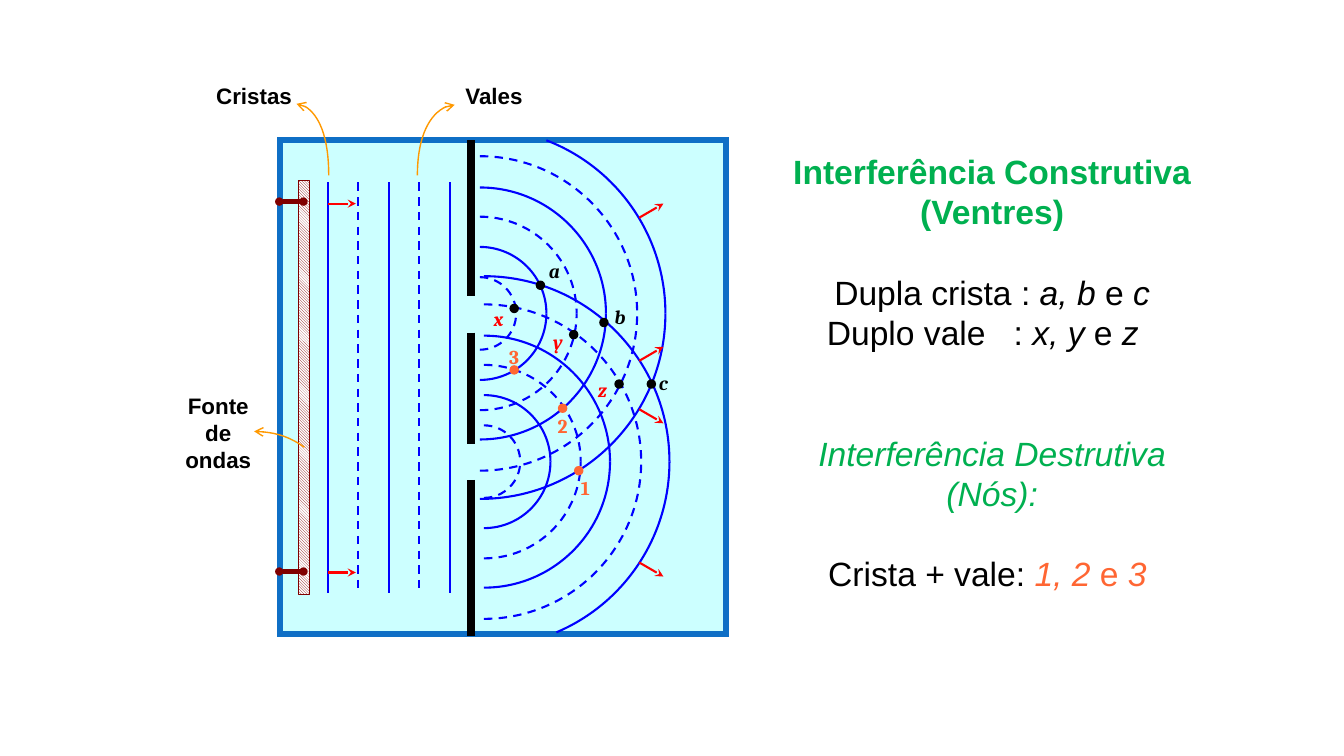
from math import cos, radians, sin, tan

from lxml import etree
from pptx import Presentation
from pptx.dml.color import RGBColor
from pptx.enum.dml import MSO_LINE, MSO_PATTERN
from pptx.enum.shapes import MSO_CONNECTOR, MSO_SHAPE
from pptx.enum.text import MSO_ANCHOR, MSO_AUTO_SIZE, PP_ALIGN
from pptx.oxml.ns import qn
from pptx.util import Inches, Pt

COLORS = {
    "water": "CCFFFF", "tank": "0F6FC6", "black": "000000", "white": "FFFFFF",
    "source": "800000", "callout": "FF9900", "wave": "0000FF",
    "red": "FF0000", "node": "FF6633", "green": "00B050",
}
LINE_PITCH = 28.7


def rgb(color):
    return RGBColor.from_string(COLORS[color])


class WaveSlide:
    def __init__(self, slide):
        self.slide = slide
        self.shapes = slide.shapes

    def stroke(self, line, color, width, dashed=False, head=None, tail=None, size="med"):
        line.color.rgb = rgb(color)
        line.width = Pt(width)
        if dashed:
            line.dash_style = MSO_LINE.DASH
        for tag, kind in (("a:headEnd", head), ("a:tailEnd", tail)):
            if kind:
                etree.SubElement(line._get_or_add_ln(), qn(tag), type=kind, w=size, len=size)

    def line(self, start, end, color, width, **style):
        points = [Inches(v) for v in (*start, *end)]
        connector = self.shapes.add_connector(MSO_CONNECTOR.STRAIGHT, *points)
        self.stroke(connector.line, color, width, **style)
        etree.SubElement(connector._element.spPr, qn("a:effectLst"))

    def shape(self, kind, box, line_color, line_width, fill=None):
        shape = self.shapes.add_shape(kind, *(Inches(v) for v in box))
        shape.shadow.inherit = False
        self.stroke(shape.line, line_color, line_width)
        if fill:
            shape.fill.solid()
            shape.fill.fore_color.rgb = rgb(fill)
        return shape

    def arc(self, center, radii, start, end, color, width, **style):
        """Draw an elliptical arc of up to 90 degrees as one Bézier curve in a box
        that reaches the center; angles run counterclockwise from the right."""
        a, b = radians(start), radians(end)
        k = 4 / 3 * tan((b - a) / 4)
        units = ((cos(a), sin(a)),
                 (cos(a) - k * sin(a), sin(a) + k * cos(a)),
                 (cos(b) + k * sin(b), sin(b) - k * cos(b)),
                 (cos(b), sin(b)))
        points = [(Inches(center[0] + radii[0] * u), Inches(center[1] - radii[1] * v))
                  for u, v in units]
        builder = self.shapes.build_freeform(*points[0])
        builder.add_line_segments([points[3], [Inches(v) for v in center]], close=False)
        curve = builder.convert_to_shape()
        to_end, to_center = curve._element.spPr.findall(".//" + qn("a:lnTo"))
        to_center.getparent().remove(to_center)
        bezier = etree.Element(qn("a:cubicBezTo"))
        for x, y in points[1:]:
            etree.SubElement(bezier, qn("a:pt"), x=str(x - curve.left), y=str(y - curve.top))
        to_end.getparent().replace(to_end, bezier)
        curve.shadow.inherit = False
        curve.fill.background()
        self.stroke(curve.line, color, width, **style)

    def label(self, text, box, color="black", size=16, font="Arial", italic=False):
        frame = self.shapes.add_textbox(*(Inches(v) for v in box)).text_frame
        frame.word_wrap = True
        frame.margin_left = frame.margin_right = frame.margin_top = frame.margin_bottom = 0
        paragraph = frame.paragraphs[0]
        paragraph.text = text
        self.format(paragraph, size, font, bold=True, italic=italic)
        paragraph.font.color.rgb = rgb(color)

    def format(self, paragraph, size, font="Arial", bold=False, italic=False):
        paragraph.alignment = PP_ALIGN.CENTER
        paragraph.font.size = Pt(size)
        paragraph.font.name = font
        paragraph.font.bold = bold
        paragraph.font.italic = italic

    def fill_placeholder(self, placeholder, box, paragraphs, bold=False):
        """Each paragraph is (blank lines before, [(text, color, italic), ...])."""
        placeholder.left, placeholder.top, placeholder.width, placeholder.height = (
            Inches(v) for v in box)
        frame = placeholder.text_frame
        frame.word_wrap = True
        frame.auto_size = MSO_AUTO_SIZE.NONE
        frame.vertical_anchor = MSO_ANCHOR.TOP
        for i, (gap, runs) in enumerate(paragraphs):
            paragraph = frame.paragraphs[0] if i == 0 else frame.add_paragraph()
            self.format(paragraph, 24, bold=bold)
            paragraph.line_spacing = Pt(LINE_PITCH)
            paragraph.space_before = Pt(gap * LINE_PITCH)
            properties = paragraph._p.get_or_add_pPr()
            properties.set("marL", "0")
            properties.set("indent", "0")
            properties.find(qn("a:defRPr")).addprevious(etree.Element(qn("a:buNone")))
            for text, color, italic in runs:
                run = paragraph.add_run()
                run.text = text
                run.font.color.rgb = rgb(color)
                run.font.italic = italic

    def tank(self):
        walls = self.shape(MSO_SHAPE.RECTANGLE, (2.78, 1.39, 4.42, 4.9), "tank", 4.5, "water")
        etree.SubElement(walls.line._get_or_add_ln(), qn("a:miter"), lim="800000")
        for top, bottom in ((1.39, 2.94), (3.3, 4.4), (4.76, 6.31)):
            self.line((4.67, top), (4.67, bottom), "black", 6)

    def wave_source(self):
        self.label("Fonte de ondas", (1.71, 3.89, 0.91, 0.82))
        plate = self.shape(MSO_SHAPE.RECTANGLE, (2.96, 1.79, 0.11, 4.11), "source", 1)
        plate.fill.patterned()
        plate.fill.pattern = MSO_PATTERN.LIGHT_DOWNWARD_DIAGONAL
        plate.fill.fore_color.rgb = rgb("source")
        plate.fill.back_color.rgb = rgb("white")
        self.arc((2.52, 5.15), (0.87, 0.87), 90, 55, "callout", 1, head="arrow")
        for y in (2, 5.67):
            self.line((2.77, y), (3.01, y), "source", 3, head="oval", tail="oval", size="sm")

    def crest_and_trough_labels(self):
        self.label("Cristas", (2.09, 0.81, 0.86, 0.22))
        self.arc((2.94, 1.74), (0.32, 0.71), 90, 0, "callout", 1, head="arrow")
        self.label("Vales", (4.48, 0.81, 0.84, 0.22))
        self.arc((4.51, 1.74), (0.37, 0.7), 90, 180, "callout", 1, head="arrow")

    def circular_waves(self, center, clip, spread):
        """Draw one slit's waves; clip maps a half to where its outer arc meets the tank."""
        y = center[1]
        radii = (0.36, 0.66, 0.96, 1.25, 1.56, 1.84)
        for half in (1, -1):
            for i, radius in enumerate(radii):
                start = clip.get(half, 90) if radius == radii[-1] else 90
                self.arc(center, (radius, radius), half * start, 0, "wave", 1.5,
                         dashed=i % 2 == 0)
            ray = y - half * spread
            self.line((6.34, ray), (6.58, ray - half * 0.14), "red", 1.5, tail="stealth")

    def plane_waves(self):
        first, last = 3.25, 4.46
        for i in range(5):
            x = first + i * (last - first) / 4
            self.line((x, 1.81), (x, 5.88), "wave", 1.5, dashed=i % 2 == 1)
        for y in (2.02, 5.68):
            self.line((first, y), (3.53, y), "red", 1.5, tail="stealth")

    def interference_point(self, name, label_box, dot, label_color, dot_color, italic):
        self.label(name, label_box, label_color, 14, "Cambria", italic)
        self.shape(MSO_SHAPE.OVAL, (*dot, 0.08, 0.08), dot_color, 1, dot_color)


def main():
    deck = Presentation()
    deck.slide_width, deck.slide_height = Inches(13.33), Inches(7.5)
    page = WaveSlide(deck.slides.add_slide(deck.slide_layouts[1]))

    page.tank()
    page.wave_source()
    page.crest_and_trough_labels()
    page.circular_waves((4.76, 3.11), {1: 69}, 0.95)
    page.circular_waves((4.8, 4.58), {-1: 67}, 1)
    page.plane_waves()

    trough, crest, node = ("red", "black", True), ("black", "black", True), ("node", "node", False)
    for name, label_box, dot, style in (
        ("y", (5.43, 3.27, 0.21, 0.26), (5.65, 3.28), trough),
        ("z", (5.88, 3.75, 0.19, 0.32), (6.1, 3.77), trough),
        ("x", (4.84, 3.04, 0.21, 0.28), (5.06, 3.02), trough),
        ("c", (6.47, 3.68, 0.22, 0.26), (6.42, 3.77), crest),
        ("b", (6.01, 3.02, 0.28, 0.25), (5.95, 3.16), crest),
        ("a", (5.37, 2.57, 0.26, 0.25), (5.32, 2.79), crest),
        ("3", (4.95, 3.42, 0.3, 0.28), (5.06, 3.63), node),
        ("2", (5.5, 4.11, 0.16, 0.25), (5.54, 4.01), node),
        ("1", (5.73, 4.72, 0.15, 0.23), (5.7, 4.63), node),
    ):
        page.interference_point(name, label_box, dot, *style)

    page.fill_placeholder(page.shapes.title, (7.7, 1.45, 4.28, 0.9), [
        (0, [("Interferência Construtiva (Ventres)", "green", False)]),
    ], bold=True)
    page.fill_placeholder(page.slide.placeholders[1], (7.7, 2.65, 4.28, 3.33), [
        (0, [("Dupla crista : ", "black", False), ("a, b", "black", True),
             (" e ", "black", False), ("c", "black", True)]),
        (0, [("Duplo vale   : ", "black", False), ("x, y ", "black", True),
             ("e ", "black", False), ("z  ", "black", True)]),
        (2, [("Interferência Destrutiva (Nós):", "green", True)]),
        (1, [("Crista + vale: ", "black", False), ("1, 2 ", "node", True),
             ("e ", "node", False), ("3 ", "node", True)]),
    ])
    deck.save("out.pptx")


if __name__ == "__main__":
    main()
